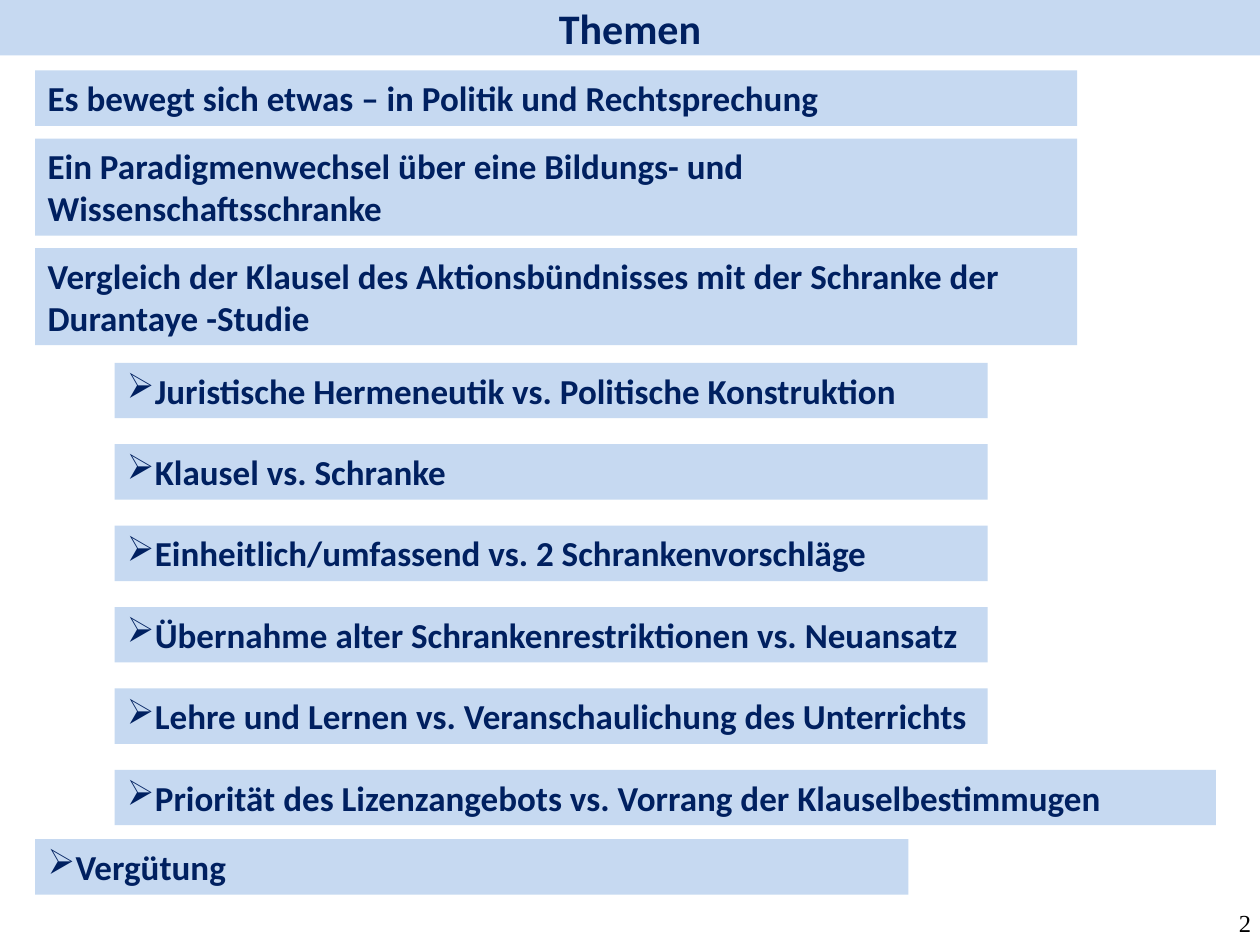
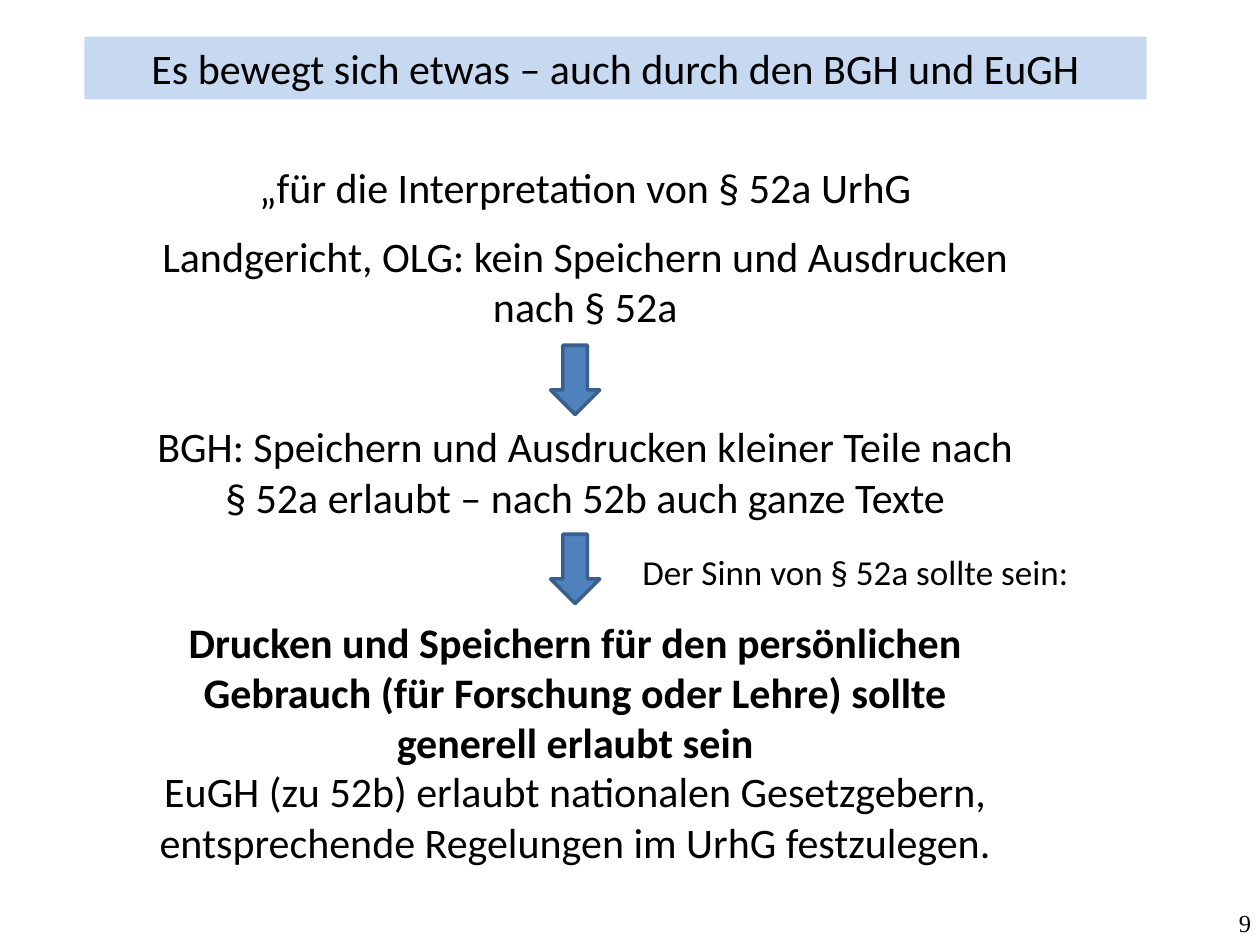
from lxml.etree import SubElement
from pptx import Presentation
from pptx.dml.color import RGBColor
from pptx.enum.shapes import MSO_SHAPE
from pptx.enum.text import MSO_ANCHOR, PP_ALIGN
from pptx.oxml.ns import qn
from pptx.util import Inches, Pt

BAND = "C6D9F1"
NAVY = "002060"
BLACK = "000000"
ARROW_FILL = "4F81BD"
ARROW_LINE = "3A5F8C"
LINE_HEIGHTS = {1: 0.44, 2: 0.77}  # band height by number of 20 pt lines


def color(hex_string):
    return RGBColor.from_string(hex_string)


def write(shape, text, size=24, font="Calibri", ink=BLACK, bold=False,
          align=PP_ALIGN.LEFT, anchor=MSO_ANCHOR.TOP, bullet=None):
    frame = shape.text_frame
    frame.word_wrap = True
    frame.vertical_anchor = anchor
    paragraph = frame.paragraphs[0]
    paragraph.alignment = align
    run = paragraph.add_run()
    run.text = text
    run.font.size = Pt(size)
    run.font.name = font
    run.font.bold = bold
    run.font.color.rgb = color(ink)
    if bullet:
        SubElement(paragraph._p.get_or_add_pPr(), qn("a:buChar"), char=bullet)
    return frame


def add_filled(slide, kind, left, top, width, height, fill):
    shape = slide.shapes.add_shape(
        kind, Inches(left), Inches(top), Inches(width), Inches(height))
    shape.shadow.inherit = False
    shape.fill.solid()
    shape.fill.fore_color.rgb = color(fill)
    shape.line.fill.background()
    return shape


def add_band(slide, text, left, top, width, height, **style):
    band = add_filled(slide, MSO_SHAPE.RECTANGLE, left, top, width, height, BAND)
    write(band, text, **style)


def add_topic(slide, text, left, top, width, lines=1, bullet=None):
    add_band(slide, text, left, top, width, LINE_HEIGHTS[lines],
             size=20, ink=NAVY, bold=True, bullet=bullet)


def add_text(slide, text, left, top, width, height, **style):
    box = slide.shapes.add_textbox(
        Inches(left), Inches(top), Inches(width), Inches(height))
    return write(box, text, **style)


def add_down_arrow(slide, top):
    arrow = add_filled(slide, MSO_SHAPE.DOWN_ARROW, 4.37, top, 0.39, 0.55, ARROW_FILL)
    arrow.line.color.rgb = color(ARROW_LINE)
    arrow.line.width = Pt(2)


def add_page(deck, number):
    slide = deck.slides.add_slide(deck.slide_layouts[6])
    footer = add_text(slide, number, 9.25, 6.98, 0.68, 0.52, size=14,
                      font="Times New Roman", align=PP_ALIGN.RIGHT)
    footer.margin_left = footer.margin_right = footer.margin_bottom = 0
    footer.margin_top = Inches(0.23)
    return slide


def build_topics(deck):
    slide = add_page(deck, "2")
    add_band(slide, "Themen", 0, 0, 10, 0.44, ink=NAVY, bold=True,
             align=PP_ALIGN.CENTER, anchor=MSO_ANCHOR.MIDDLE)

    # Main topics
    main_topics = [
        ("Es bewegt sich etwas – in Politik und Rechtsprechung", 1),
        ("Ein Paradigmenwechsel über eine Bildungs- und Wissenschaftsschranke", 2),
        ("Vergleich der Klausel des Aktionsbündnisses mit der Schranke der "
         "Durantaye -Studie", 2),
    ]
    top = 0.56
    for text, lines in main_topics:
        add_topic(slide, text, 0.28, top, 8.27, lines)
        top += LINE_HEIGHTS[lines] + 0.1

    # Points of the comparison, the last one on a wider band
    comparisons = [
        "Juristische Hermeneutik vs. Politische Konstruktion",
        "Klausel vs. Schranke",
        "Einheitlich/umfassend vs. 2 Schrankenvorschläge",
        "Übernahme alter Schrankenrestriktionen vs. Neuansatz",
        "Lehre und Lernen vs. Veranschaulichung des Unterrichts",
        "Priorität des Lizenzangebots vs. Vorrang der Klauselbestimmugen",
    ]
    first, last = 2.88, 6.11
    step = (last - first) / (len(comparisons) - 1)
    for index, text in enumerate(comparisons):
        width = 8.74 if text == comparisons[-1] else 6.93
        add_topic(slide, text, 0.91, first + index * step, width, bullet="➢")
    add_topic(slide, "Vergütung", 0.28, 6.66, 6.93, bullet="➢")


def build_rulings(deck):
    slide = add_page(deck, "9")
    add_band(slide, "Es bewegt sich etwas – auch durch den BGH und EuGH",
             0.67, 0.29, 8.43, 0.5, align=PP_ALIGN.CENTER)

    # Rulings from the lower courts up to the EuGH
    rulings = [
        ("„für die Interpretation von § 52a UrhG", 1.14, 1.23, 0.5, False),
        ("Landgericht, OLG: kein Speichern und Ausdrucken nach § 52a",
         1.14, 1.78, 0.91, False),
        ("BGH: Speichern und Ausdrucken kleiner Teile nach § 52a erlaubt – "
         "nach 52b auch ganze Texte", 1.14, 3.29, 0.91, False),
        ("Drucken und Speichern für den persönlichen Gebrauch (für Forschung "
         "oder Lehre) sollte generell erlaubt sein", 1.06, 4.84, 1.31, True),
        ("EuGH (zu 52b) erlaubt nationalen Gesetzgebern, entsprechende "
         "Regelungen im UrhG festzulegen.", 1.06, 6.03, 0.91, False),
    ]
    for text, left, top, height, bold in rulings:
        add_text(slide, text, left, top, 7.01, height, bold=bold,
                 align=PP_ALIGN.CENTER)

    # Steps between the rulings
    for top in (2.74, 4.24):
        add_down_arrow(slide, top)
    add_text(slide, "Der Sinn von § 52a sollte sein:", 5, 4.32, 4.33, 0.44, size=20)


def main():
    deck = Presentation()
    deck.slide_width = Inches(10)
    deck.slide_height = Inches(7.5)
    build_topics(deck)
    build_rulings(deck)
    deck.save("out.pptx")


if __name__ == "__main__":
    main()
